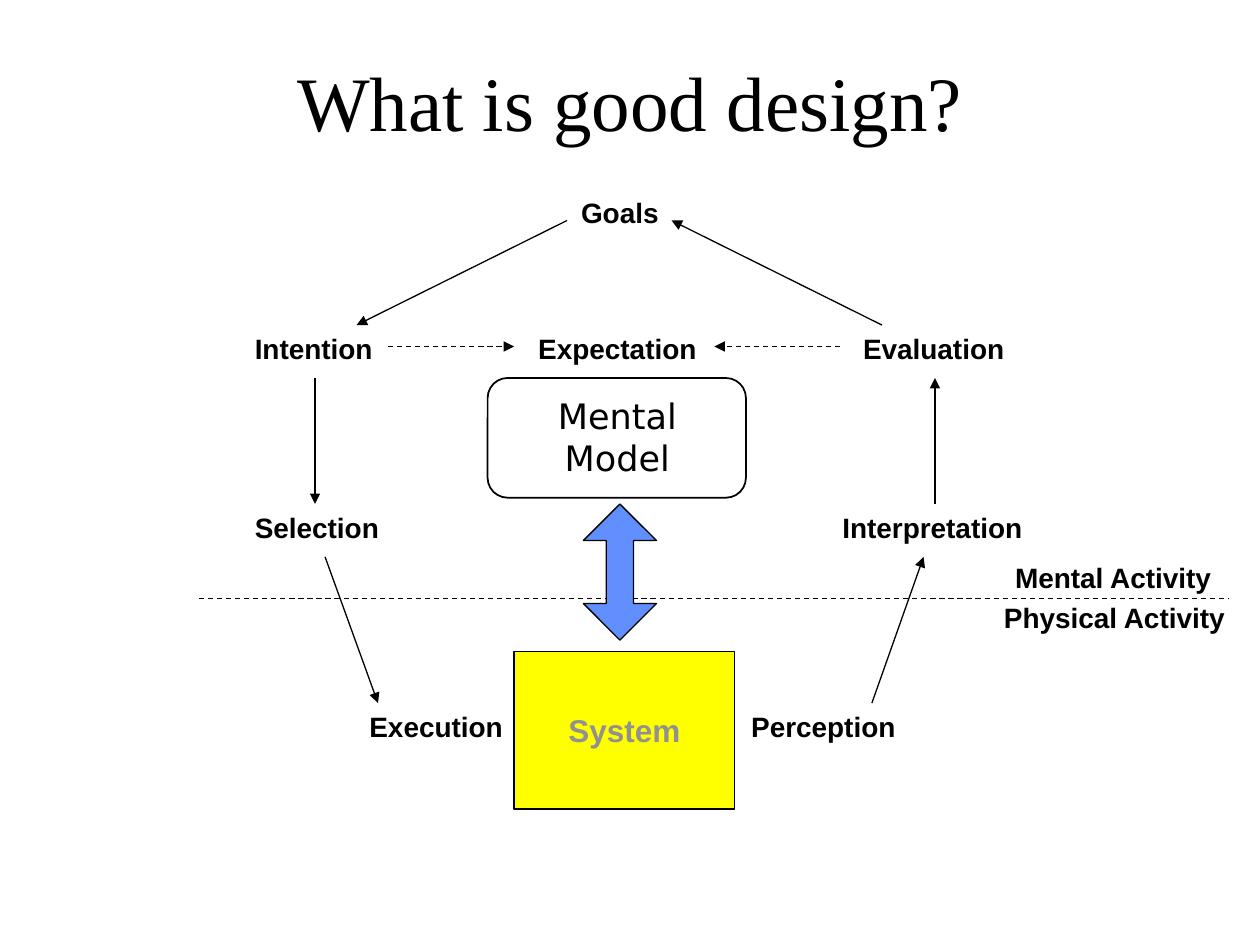
import pptx
import pptx.util
import pptx.dml.color
import pptx.enum.dml
import pptx.enum.shapes
import pptx.enum.text
import pptx.oxml.ns
import lxml.etree

Inches = pptx.util.Inches
Pt = pptx.util.Pt
ALIGN = pptx.enum.text.PP_ALIGN
SHAPE = pptx.enum.shapes.MSO_SHAPE

# Content: text, left, top, width, alignment, wrap
TITLE = "What is good design?"
LABEL_HEIGHT = 0.37
LABELS = [
    ("Goals", 4.51, 1.5, 0.82, ALIGN.CENTER, False),
    ("Intention", 1.92, 2.58, 1.14, ALIGN.CENTER, False),
    ("Expectation", 4.17, 2.58, 1.46, ALIGN.CENTER, False),
    ("Evaluation", 6.75, 2.58, 1.32, ALIGN.CENTER, False),
    ("Selection", 1.92, 4, 1.19, ALIGN.CENTER, False),
    ("Interpretation", 6.58, 4, 1.64, ALIGN.CENTER, False),
    ("Execution", 2.83, 5.58, 1.26, ALIGN.RIGHT, True),
    ("Perception", 5.82, 5.58, 1.43, ALIGN.CENTER, True),
    ("Mental Activity", 7.95, 4.4, 1.77, ALIGN.CENTER, False),
    ("Physical Activity", 7.86, 4.72, 1.97, ALIGN.CENTER, False),
]

# Lines: start, end, dashed, arrowhead
LINES = [
    ((4.5, 1.75), (2.83, 2.58), False, True),    # goals to intention
    ((2.5, 3), (2.5, 4), False, True),           # intention to selection
    ((2.58, 4.42), (3, 5.58), False, True),      # selection to execution
    ((6.92, 5.58), (7.33, 4.42), False, True),   # perception to interpretation
    ((7.42, 4), (7.42, 3), False, True),         # interpretation to evaluation
    ((7, 2.58), (5.33, 1.75), False, True),      # evaluation to goals
    ((3.08, 2.75), (4.08, 2.75), True, True),    # intention to expectation
    ((6.67, 2.75), (5.67, 2.75), True, True),    # evaluation to expectation
    ((1.58, 4.75), (9.75, 4.75), True, False),   # mental / physical border
]


def color(value):
    return pptx.dml.color.RGBColor.from_string(value)


def write(shape, lines, size, font, bold=False, ink="000000",
          align=ALIGN.CENTER, wrap=True, anchor=pptx.enum.text.MSO_ANCHOR.TOP):
    frame = shape.text_frame
    frame.word_wrap = wrap
    frame.vertical_anchor = anchor
    for index, line in enumerate(lines):
        paragraph = frame.add_paragraph() if index else frame.paragraphs[0]
        paragraph.alignment = align
        run = paragraph.add_run()
        run.text = line
        run.font.size = Pt(size)
        run.font.name = font
        run.font.bold = bold
        run.font.color.rgb = color(ink)


def add_text(slide, box, lines, size, font, **style):
    write(slide.shapes.add_textbox(*map(Inches, box)), lines, size, font, **style)


def add_block(slide, kind, box, fill=None, line_width=0.75, adjustments=()):
    shape = slide.shapes.add_shape(kind, *map(Inches, box))
    shape.shadow.inherit = False
    if fill:
        shape.fill.solid()
        shape.fill.fore_color.rgb = color(fill)
    else:
        shape.fill.background()
    shape.line.color.rgb = color("000000")
    shape.line.width = Pt(line_width)
    for index, value in enumerate(adjustments):
        shape.adjustments[index] = value
    return shape


def add_line(slide, start, end, dashed, arrow):
    connector = slide.shapes.add_connector(
        pptx.enum.shapes.MSO_CONNECTOR.STRAIGHT, *map(Inches, start + end))
    connector.line.color.rgb = color("000000")
    connector.line.width = Pt(0.75)
    if dashed:
        connector.line.dash_style = pptx.enum.dml.MSO_LINE.DASH
    qn = pptx.oxml.ns.qn
    properties = connector._element.spPr
    if arrow:
        outline = properties.find(qn("a:ln"))
        lxml.etree.SubElement(outline, qn("a:tailEnd"), type="triangle")
    lxml.etree.SubElement(properties, qn("a:effectLst"))


def main():
    presentation = pptx.Presentation()
    presentation.slide_width = Inches(10)
    presentation.slide_height = Inches(7.5)
    slide = presentation.slides.add_slide(presentation.slide_layouts[6])
    middle = pptx.enum.text.MSO_ANCHOR.MIDDLE

    # Title
    add_text(slide, (0.75, 0.17, 8.5, 1.25), [TITLE], 44, "Times New Roman",
             anchor=middle)

    # Stages of action and the lines between them
    for text, left, top, width, align, wrap in LABELS:
        add_text(slide, (left, top, width, LABEL_HEIGHT), [text], 16, "Arial",
                 bold=True, align=align, wrap=wrap)
    for line in LINES:
        add_line(slide, *line)

    # System
    system = add_block(slide, SHAPE.RECTANGLE, (4.08, 5.17, 1.75, 1.25), "FFFF00")
    write(system, ["System"], 18, "Arial", bold=True, ink="919191",
          wrap=False, anchor=middle)

    # Mental model and its exchange with the system
    add_block(slide, SHAPE.ROUNDED_RECTANGLE, (3.87, 3, 2.05, 0.95),
              line_width=1, adjustments=[0.167])
    add_text(slide, (3.8, 3.08, 2.2, 0.77), ["Mental", "Model"], 20, "DejaVu Sans")
    add_block(slide, SHAPE.UP_DOWN_ARROW, (4.63, 4, 0.58, 1.08), "618FFD",
              adjustments=[0.5, 0.371])

    presentation.save("out.pptx")


if __name__ == "__main__":
    main()
